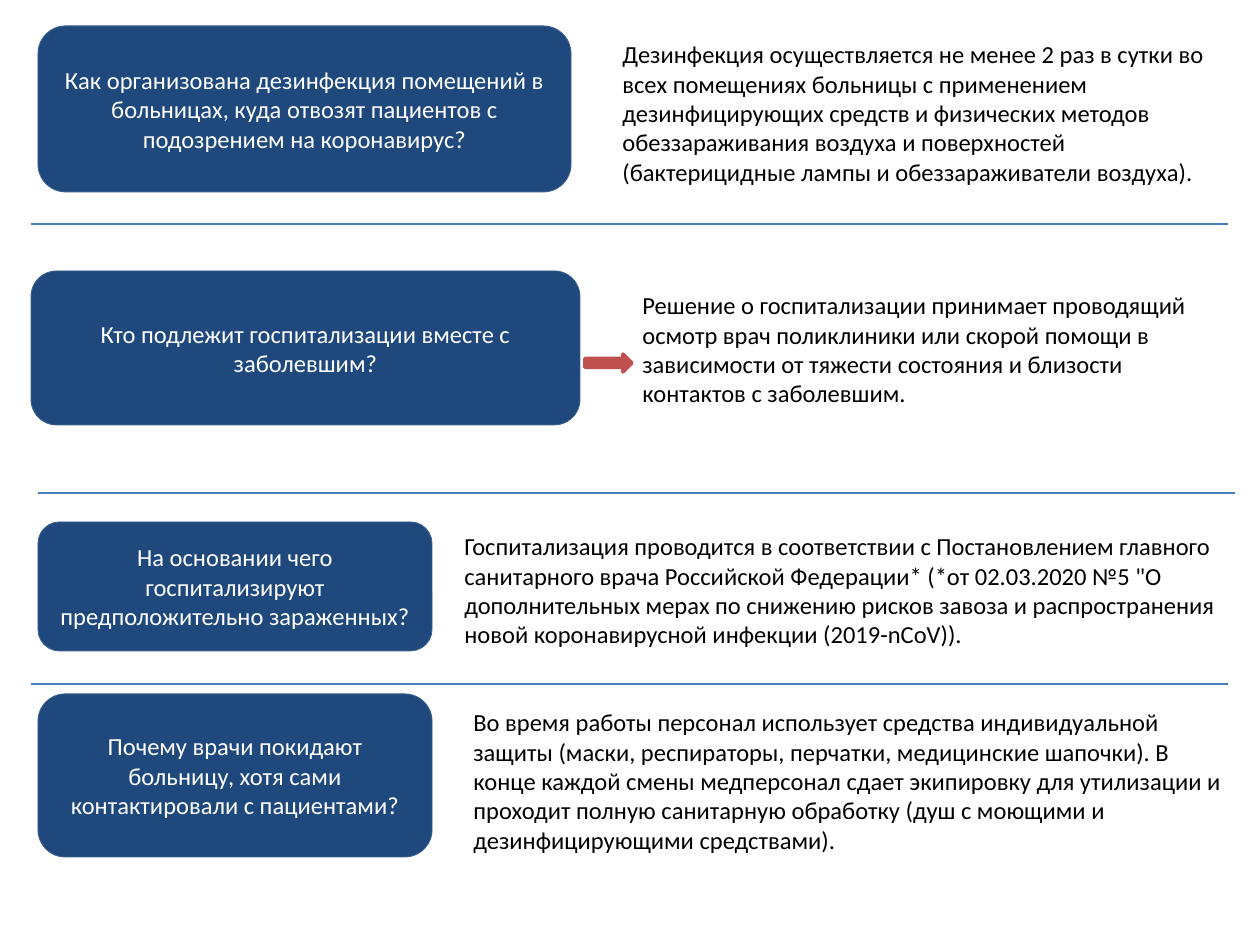
from pptx import Presentation
from pptx.dml.color import RGBColor
from pptx.enum.shapes import MSO_CONNECTOR as Connector, MSO_SHAPE as Shape
from pptx.enum.text import MSO_ANCHOR as Anchor, MSO_AUTO_SIZE as AutoSize, PP_ALIGN as Align
from pptx.oxml.ns import qn
from pptx.util import Pt
from lxml.etree import SubElement

EMU_PER_PX = 914400 / 126
NAVY, NAVY_EDGE, RULE_BLUE, RED = "1F497D", "3A5F8C", "4B7EBC", "C0504D"
WHITE, BLACK = "FFFFFF", "000000"
QUESTION_FRAME = {"word_wrap": True, "vertical_anchor": Anchor.MIDDLE}
ANSWER_FRAME = {"word_wrap": True, "auto_size": AutoSize.SHAPE_TO_FIT_TEXT}
TEXT_FONT = {"name": "Calibri", "size": Pt(14)}

TOPICS = [
    ("Как организована дезинфекция помещений в больницах, куда отвозят пациентов "
     "с подозрением на коронавирус?", (38, 26, 533, 166),
     "Дезинфекция осуществляется не менее 2 раз в сутки во всех помещениях больницы "
     "с применением дезинфицирующих средств и физических методов обеззараживания воздуха "
     "и поверхностей (бактерицидные лампы и обеззараживатели воздуха).",
     (610, 33, 609, 161)),
    ("Кто подлежит госпитализации вместе с заболевшим?", (31, 271, 549, 154),
     "Решение о госпитализации принимает проводящий осмотр врач поликлиники или скорой "
     "помощи в зависимости от тяжести состояния и близости контактов с заболевшим.",
     (630, 284, 588, 131)),
    ("На основании чего госпитализируют предположительно зараженных?", (38, 522, 394, 129),
     "Госпитализация проводится в соответствии с Постановлением главного санитарного врача "
     "Российской Федерации* (*от 02.03.2020 №5 \"О дополнительных мерах по снижению рисков "
     "завоза и распространения новой коронавирусной инфекции (2019-nCoV)).",
     (452, 525, 779, 131)),
    ("Почему врачи покидают больницу, хотя сами контактировали с пациентами?",
     (38, 694, 394, 163),
     "Во время работы персонал использует средства индивидуальной защиты (маски, "
     "респираторы, перчатки, медицинские шапочки). В конце каждой смены медперсонал сдает "
     "экипировку для утилизации и проходит полную санитарную обработку (душ с моющими "
     "и дезинфицирующими средствами).",
     (461, 701, 774, 161)),
]
DIVIDER_LENGTH = 1197
DIVIDER_STARTS = [(31, 224), (38, 493), (31, 684)]


def px(*lengths):
    """Turn pixel lengths into EMU."""
    return [round(length * EMU_PER_PX) for length in lengths]


def color(hex_value):
    """Return the colour of a hex string."""
    return RGBColor.from_string(hex_value)


def apply(target, formats):
    """Set each format value on the target."""
    for attribute, value in formats.items():
        setattr(target, attribute, value)


def stroke(line, hex_value, width):
    """Give a line its colour and its width in points."""
    line.color.rgb = color(hex_value)
    line.width = Pt(width)


def write(frame, text, frame_formats, align, hex_value):
    """Fill a text frame with one formatted paragraph."""
    apply(frame, frame_formats)
    paragraph = frame.paragraphs[0]
    paragraph.alignment = align
    run = paragraph.add_run()
    run.text = text
    apply(run.font, TEXT_FONT)
    run.font.color.rgb = color(hex_value)


def add_block(slide, preset, bounds, fill, edge, width):
    """Add a filled and outlined preset shape."""
    block = slide.shapes.add_shape(preset, *px(*bounds))
    block.shadow.inherit = False
    block.fill.solid()
    block.fill.fore_color.rgb = color(fill)
    stroke(block.line, edge, width)
    return block


def add_question(slide, text, bounds):
    """Add a rounded navy box with a question."""
    box = add_block(slide, Shape.ROUNDED_RECTANGLE, bounds, NAVY, NAVY_EDGE, 0.5)
    write(box.text_frame, text, QUESTION_FRAME, Align.CENTER, WHITE)


def add_answer(slide, text, bounds):
    """Add a text box with an answer."""
    box = slide.shapes.add_textbox(*px(*bounds))
    write(box.text_frame, text, ANSWER_FRAME, Align.LEFT, BLACK)


def add_divider(slide, left, top):
    """Add a thin horizontal rule between topics."""
    ends = px(left, top, left + DIVIDER_LENGTH, top)
    divider = slide.shapes.add_connector(Connector.STRAIGHT, *ends)
    stroke(divider.line, RULE_BLUE, 0.75)
    SubElement(divider._element.spPr, qn("a:effectLst"))


def main():
    """Build and save the slide."""
    deck = Presentation()
    deck.slide_width, deck.slide_height = px(1260, 945)
    slide = deck.slides.add_slide(deck.slide_layouts[6])
    for question, question_bounds, answer, answer_bounds in TOPICS:
        add_question(slide, question, question_bounds)
        add_answer(slide, answer, answer_bounds)
    for left, top in DIVIDER_STARTS:
        add_divider(slide, left, top)
    add_block(slide, Shape.RIGHT_ARROW, (585, 354, 47, 18), RED, RED, 2)
    deck.save("out.pptx")


if __name__ == "__main__":
    main()
